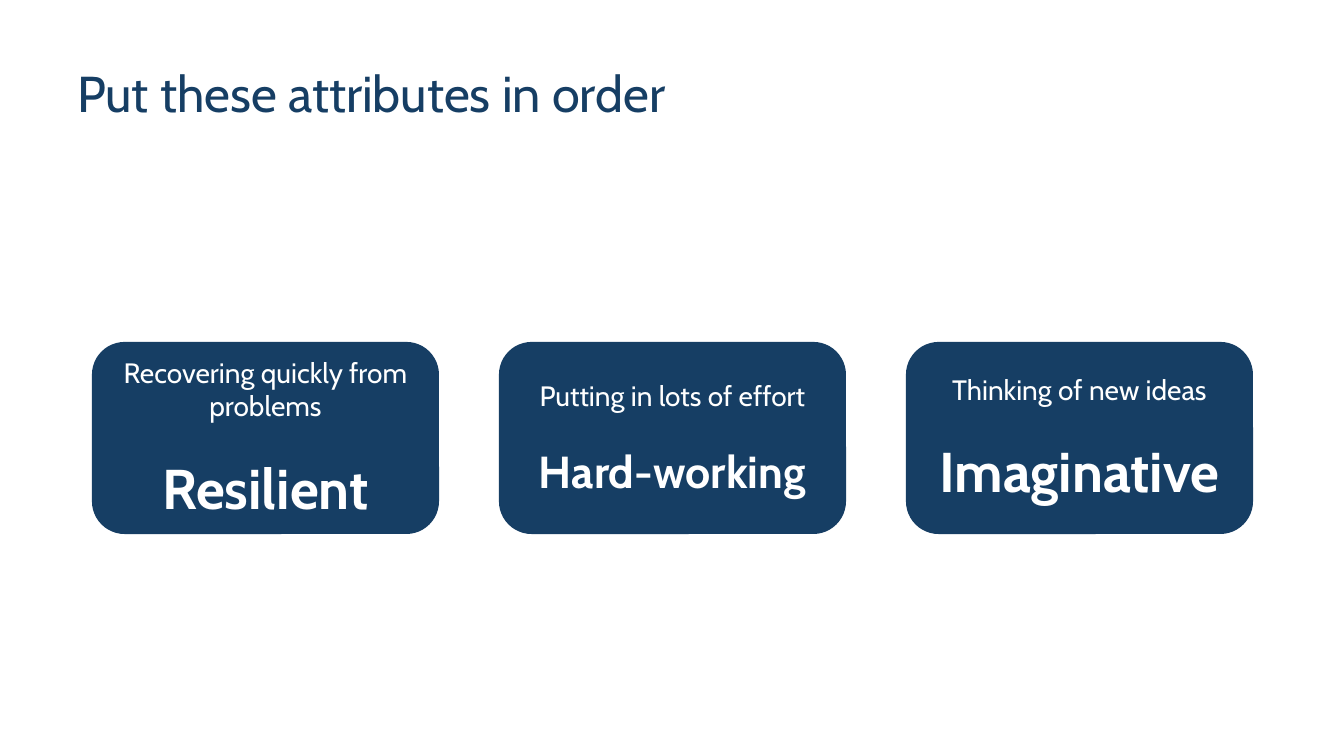
from pptx import Presentation
from pptx.dml.color import RGBColor
from pptx.enum.shapes import MSO_SHAPE
from pptx.enum.text import MSO_ANCHOR, MSO_AUTO_SIZE, PP_ALIGN
from pptx.util import Emu, Pt

TITLE = "Put these attributes in order"
# meaning, attribute, attribute size in points
CARDS = [
    ("Recovering quickly from problems", "Resilient", 40),
    ("Putting in lots of effort", "Hard-working", 32),
    ("Thinking of new ideas", "Imaginative", 40),
]

FONT = "Cabin"
COLORS = {"navy": "163E64", "white": "FFFFFF"}
ROUNDED = MSO_SHAPE.ROUNDED_RECTANGLE
MIDDLE = MSO_ANCHOR.MIDDLE
LEFT, CENTER = PP_ALIGN.LEFT, PP_ALIGN.CENTER

PX_PER_INCH = 100.8
SLIDE_SIZE = (1344, 756)
TITLE_BOX = (67, 54, 697, 84)
CARD_LEFT, CARD_TOP, CARD_WIDTH, CARD_HEIGHT = 93, 343, 345, 190
CARD_STEP = 407


def px(length):
    return Emu(round(length * 914400 / PX_PER_INCH))


def color(name):
    return RGBColor.from_string(COLORS[name])


def write(paragraph, text, size, color_name, align, bold=False):
    paragraph.text = text
    paragraph.alignment = align
    paragraph.font.name = FONT
    paragraph.font.size = Pt(size)
    paragraph.font.bold = bold
    paragraph.font.color.rgb = color(color_name)


def add_title(slide):
    title = slide.shapes.title
    title.left, title.top, title.width, title.height = map(px, TITLE_BOX)
    frame = title.text_frame
    frame.word_wrap = True
    frame.auto_size = MSO_AUTO_SIZE.NONE
    frame.vertical_anchor = MIDDLE
    paragraph = frame.paragraphs[0]
    write(paragraph, TITLE, 36, "navy", LEFT)
    paragraph.line_spacing = 0.9


def add_card(slide, left, meaning, attribute, attribute_size):
    card = slide.shapes.add_shape(
        ROUNDED, px(left), px(CARD_TOP), px(CARD_WIDTH), px(CARD_HEIGHT))
    card.shadow.inherit = False
    card.fill.solid()
    card.fill.fore_color.rgb = color("navy")
    card.line.color.rgb = color("navy")
    card.line.width = Pt(1.5)
    frame = card.text_frame
    frame.word_wrap = True
    frame.vertical_anchor = MIDDLE
    write(frame.paragraphs[0], meaning, 20, "white", CENTER)
    paragraph = frame.add_paragraph()
    write(paragraph, attribute, attribute_size, "white", CENTER, bold=True)
    paragraph.space_before = Pt(22)


def main():
    presentation = Presentation()
    presentation.slide_width, presentation.slide_height = map(px, SLIDE_SIZE)
    slide = presentation.slides.add_slide(presentation.slide_layouts[5])
    add_title(slide)
    for index, card in enumerate(CARDS):
        add_card(slide, CARD_LEFT + index * CARD_STEP, *card)
    presentation.save("out.pptx")


if __name__ == "__main__":
    main()
